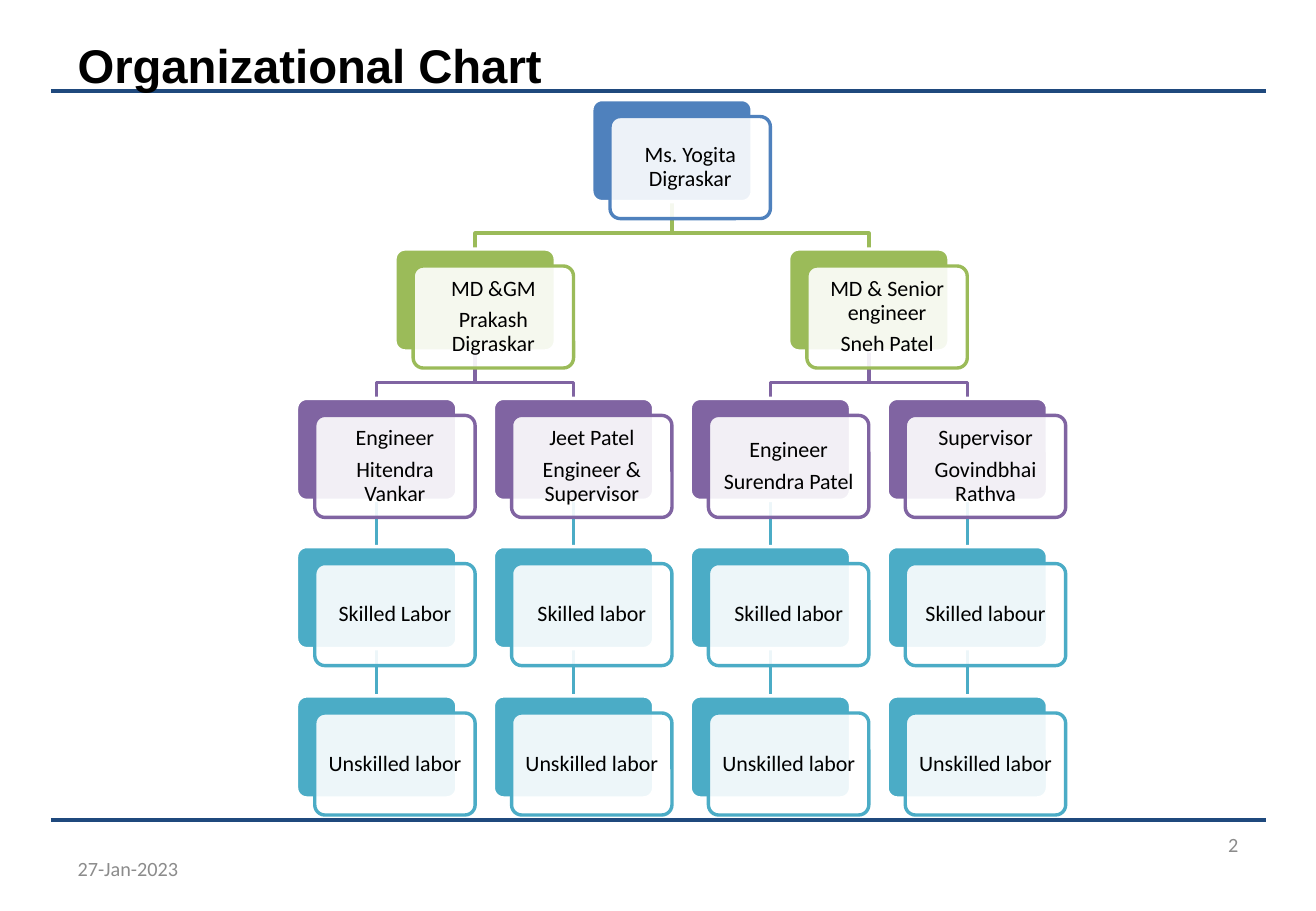
"""Build the organizational chart slide."""
from lxml import etree
from pptx import Presentation, util as u
from pptx.dml.color import RGBColor
from pptx.enum import shapes, text
from pptx.oxml.ns import qn

PX = 9144
NAVY = RGBColor(0x1F, 0x49, 0x7D)
BLUE = RGBColor(0x4F, 0x81, 0xBD)
GREEN = RGBColor(0x9B, 0xBB, 0x59)
PURPLE = RGBColor(0x80, 0x64, 0xA2)
TEAL = RGBColor(0x4B, 0xAC, 0xC6)
WHITE = RGBColor(0xFF, 0xFF, 0xFF)
BLACK = RGBColor(0, 0, 0)
GRAY = RGBColor(0x8B, 0x8B, 0x8B)

CHART_LEFT, CHART_TOP = 244, 82
COLUMN_PITCH, ROW_PITCH = 162, 122.75
CARD_WIDTH, CARD_HEIGHT = 132, 84
FRONT_RIGHT, FRONT_DOWN = 15, 14
ELBOW_DROP = 26

LEVELS = [
    (BLUE, [["Ms. Yogita Digraskar"]]),
    (GREEN, [["MD &GM", "Prakash Digraskar"],
             ["MD & Senior engineer", "Sneh Patel"]]),
    (PURPLE, [["Engineer", "Hitendra Vankar"],
              ["Jeet Patel", "Engineer & Supervisor"],
              ["Engineer", "Surendra Patel"],
              ["Supervisor", "Govindbhai Rathva"]]),
    (TEAL, [["Skilled Labor"], ["Skilled labor"], ["Skilled labor"], ["Skilled labour"]]),
    (TEAL, [["Unskilled labor"]] * 4),
]
COLUMNS = 4

presentation = Presentation()
presentation.slide_width = 1083 * PX
presentation.slide_height = 750 * PX
slide = presentation.slides.add_slide(presentation.slide_layouts[6])


def add_line(x1, y1, x2, y2, color, width):
    line = slide.shapes.add_connector(
        shapes.MSO_CONNECTOR.STRAIGHT, x1 * PX, y1 * PX, x2 * PX, y2 * PX)
    line.line.color.rgb = color
    line.line.width = u.Pt(width)
    etree.SubElement(line.element.spPr, qn("a:effectLst"))
    return line


def add_card(left, top, fill, outline):
    card = slide.shapes.add_shape(
        shapes.MSO_SHAPE.ROUNDED_RECTANGLE,
        left * PX, top * PX, CARD_WIDTH * PX, CARD_HEIGHT * PX)
    card.adjustments[0] = 0.1
    card.shadow.inherit = False
    card.fill.solid()
    card.fill.fore_color.rgb = fill
    card.line.color.rgb = outline
    card.line.width = u.Pt(2)
    return card


for rule_y in (75, 675):
    add_line(42, rule_y, 1042, rule_y, NAVY, 2.25)

TOP, MIDDLE = text.MSO_ANCHOR.TOP, text.MSO_ANCHOR.MIDDLE
LEFT, RIGHT = text.PP_ALIGN.LEFT, text.PP_ALIGN.RIGHT
for left, top, width, height, words, font, size, color, bold, anchor, align in [
    (54, 25, 588, 57, "Organizational Chart", "Arial", 28, BLACK, True, TOP, LEFT),
    (54, 695, 253, 40, "27-Jan-2023", "Calibri", 12, GRAY, False, MIDDLE, LEFT),
    (776, 675, 253, 40, "2", "Calibri", 12, GRAY, False, MIDDLE, RIGHT),
]:
    box = slide.shapes.add_textbox(left * PX, top * PX, width * PX, height * PX)
    box.text_frame.word_wrap = True
    box.text_frame.vertical_anchor = anchor
    paragraph = box.text_frame.paragraphs[0]
    paragraph.alignment = align
    run = paragraph.add_run()
    run.text = words
    run.font.name = font
    run.font.size = u.Pt(size)
    run.font.bold = bold
    run.font.color.rgb = color

first_card = None
parents = []
for row, (color, cards) in enumerate(LEVELS):
    top = round(CHART_TOP + ROW_PITCH * row)
    span = COLUMNS / len(cards)
    children = []
    for index, lines in enumerate(cards):
        left = round(CHART_LEFT + COLUMN_PITCH * ((index + 0.5) * span - 0.5))
        center = left + CARD_WIDTH // 2
        back = add_card(left, top, color, WHITE)
        first_card = first_card or back
        children.append((back, center, top + CARD_HEIGHT))

        front = add_card(left + FRONT_RIGHT, top + FRONT_DOWN, WHITE, color)
        fill_color = front.element.spPr.find(".//" + qn("a:srgbClr"))
        etree.SubElement(fill_color, qn("a:alpha"), val="90000")
        frame = front.text_frame
        frame.word_wrap = True
        frame.vertical_anchor = MIDDLE
        frame.margin_left = frame.margin_right = 5 * PX
        frame.margin_top = frame.margin_bottom = 5 * PX
        for number, words in enumerate(lines):
            paragraph = frame.add_paragraph() if number else frame.paragraphs[0]
            paragraph.alignment = text.PP_ALIGN.CENTER
            paragraph.line_spacing = 0.9
            paragraph.space_after = u.Pt(4.5)
            run = paragraph.add_run()
            run.text = words
            run.font.name = "Calibri"
            run.font.size = u.Pt(13)
            run.font.color.rgb = BLACK

        if not parents:
            continue
        parent, parent_x, parent_y = parents[index * len(parents) // len(cards)]
        if parent_x == center:
            link = add_line(center, parent_y, center, top, color, 2)
            link.begin_connect(parent, 2)
            link.end_connect(back, 0)
        else:
            elbow_y = parent_y + ELBOW_DROP
            builder = slide.shapes.build_freeform(parent_x, parent_y, scale=PX)
            builder.add_line_segments(
                [(parent_x, elbow_y), (center, elbow_y), (center, top)], close=False)
            link = builder.convert_to_shape()
            link.shadow.inherit = False
            link.fill.background()
            link.line.color.rgb = color
            link.line.width = u.Pt(2)
        first_card.element.addprevious(link.element)
    parents = children

presentation.save("out.pptx")
